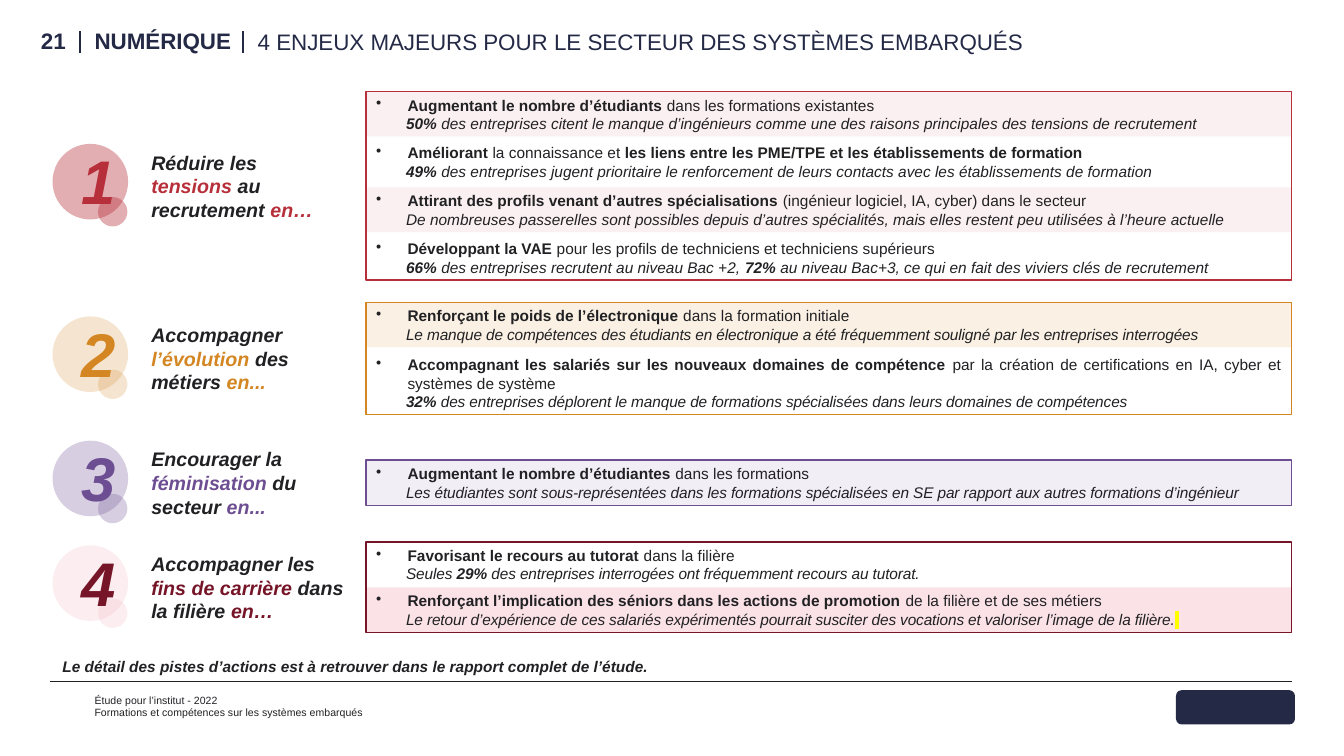
import pptx
import pptx.util
import pptx.dml.color
import pptx.enum.shapes
import pptx.enum.text
import pptx.oxml.ns
import lxml.etree
from dataclasses import dataclass

Pt = pptx.util.Pt
Shape = pptx.enum.shapes.MSO_SHAPE
Align = pptx.enum.text.PP_ALIGN
Anchor = pptx.enum.text.MSO_ANCHOR
qn = pptx.oxml.ns.qn


@dataclass(frozen=True)
class Theme:
    font: str = "Arial"
    ink: str = "212124"
    navy: str = "242946"
    red: str = "B72F3A"
    orange: str = "D38622"
    purple: str = "6D4E92"
    wine: str = "761527"
    pink: str = "F4C0CA"
    blush: str = "F4D2D5"
    pale: str = "FBF0F1"
    cream: str = "F8E7D1"
    lilac: str = "E2DAEB"
    white: str = "FFFFFF"
    marker: str = "FFFF00"
    title: float = 16
    digit: float = 44
    heading: float = 14
    body: float = 11
    footer: float = 7.5


THEME = Theme()

STAKES = [
    {"top": 65.5, "height": 134.5, "width": 140, "accent": THEME.red, "disc": (THEME.red, 39), "spacing": 0,
     "heading": [("Réduire les ", ""), ("tensions", "a"), (" au recrutement ", ""), ("en…", "a")],
     "rows": [
         (THEME.blush, 33, 32,
          [("Augmentant le nombre d’étudiants ", "b"), ("dans les formations existantes", "")],
          [("50% ", "bi"), ("des entreprises citent le manque d’ingénieurs comme une des raisons "
                            "principales des tensions de recrutement ", "i")]),
         (THEME.white, 100, 32,
          [("Améliorant", "b"), (" la connaissance et ", ""),
           ("les liens entre les PME/TPE et les établissements de formation ", "b")],
          [("49%", "bi"), (" des entreprises jugent prioritaire le renforcement de leurs contacts "
                           "avec les établissements de formation", "i")]),
         (THEME.pale, 100, 32,
          [("Attirant des profils venant d’autres spécialisations ", "b"),
           ("(ingénieur logiciel, IA, cyber) dans le secteur", "")],
          [("De nombreuses passerelles sont possibles depuis d’autres spécialités, mais elles "
            "restent peu utilisées à l’heure actuelle", "i")]),
         (THEME.white, 100, 32,
          [("Développant la VAE ", "b"), ("pour les profils de techniciens et techniciens supérieurs ", "")],
          [("66% ", "bi"), ("des entreprises recrutent au niveau Bac +2, ", "i"), ("72%", "bi"),
           (" au niveau Bac+3, ce qui en fait des viviers clés de recrutement ", "i")])]},
    {"top": 216, "height": 80, "width": 152, "accent": THEME.orange, "disc": (THEME.orange, 21), "spacing": -10,
     "heading": [("Accompagner ", ""), ("l’évolution", "a"), (" des métiers ", ""), ("en...", "a")],
     "rows": [
         (THEME.cream, 60, 32,
          [("Renforçant le poids de l’électronique ", "b"), ("dans la formation initiale", "")],
          [("Le manque de compétences des étudiants en électronique a été fréquemment souligné "
            "par les entreprises interrogées ", "i")]),
         (THEME.white, 100, 45,
          [("Accompagnant les salariés sur les nouveaux domaines de compétence ", "b"),
           ("par la création de certifications en IA, cyber et systèmes de système ", "")],
          [("32% ", "bi"), ("des entreprises déplorent le manque de formations spécialisées "
                            "dans leurs domaines de compétences ", "i")])]},
    {"top": 328.5, "height": 32.5, "width": 152, "accent": THEME.purple, "disc": (THEME.purple, 27), "spacing": -10,
     "heading": [("Encourager la ", ""), ("féminisation", "a"), (" du secteur ", ""), ("en...", "a")],
     "rows": [
         (THEME.lilac, 45, 32.5,
          [("Augmentant le nombre d’étudiantes ", "b"), ("dans les formations", "")],
          [("Les étudiantes sont sous-représentées dans les formations spécialisées en SE "
            "par rapport aux autres formations d’ingénieur", "i")])]},
    {"top": 387, "height": 65, "width": 152, "accent": THEME.wine, "disc": (THEME.pink, 27), "spacing": -10,
     "heading": [("Accompagner les ", ""), ("fins de carrière ", "a"), ("dans la filière ", ""), ("en…", "a")],
     "rows": [
         (THEME.white, 45, 32.5,
          [("Favorisant le recours au tutorat ", "b"), ("dans la filière", "")],
          [("Seules ", "i"), ("29% ", "bi"),
           ("des entreprises interrogées ont fréquemment recours au tutorat. ", "i")]),
         (THEME.pink, 45, 32.5,
          [("Renforçant l’implication des séniors dans les actions de promotion ", "b"),
           ("de la filière et de ses métiers", "")],
          [("Le retour d’expérience de ces salariés expérimentés pourrait susciter des vocations "
            "et valoriser l’image de la filière.", "i"), (" ", "ih")])]},
]


def rgb(value):
    return pptx.dml.color.RGBColor.from_string(value)


def apply(target, values):
    for name, value in values.items():
        setattr(target, name, value)


def write_spans(para, spans, size, color, accent=None, base="", spacing=0):
    for text, style in spans:
        style += base
        span = para.add_run()
        span.text = text
        apply(span.font, {"name": THEME.font, "size": Pt(size), "bold": "b" in style, "italic": "i" in style})
        span.font.color.rgb = rgb(accent if "a" in style else color)
        props = span.font._element
        if spacing:
            props.set("spc", str(spacing))
        if "h" in style:
            mark = lxml.etree.Element(qn("a:highlight"))
            lxml.etree.SubElement(mark, qn("a:srgbClr")).set("val", THEME.marker)
            props.find(qn("a:solidFill")).addnext(mark)


def add_text(page, box, lines, size, color, accent=None, base="", align=Align.LEFT, anchor=Anchor.TOP, wrap=True):
    frame = page.shapes.add_textbox(*map(Pt, box)).text_frame
    apply(frame, {"word_wrap": wrap, "vertical_anchor": anchor})
    for index, spans in enumerate(lines):
        para = frame.add_paragraph() if index else frame.paragraphs[0]
        para.alignment = align
        write_spans(para, spans, size, color, accent, base)


def add_block(page, kind, box, fill=None, alpha=100):
    block = page.shapes.add_shape(kind, *map(Pt, box))
    block.shadow.inherit = False
    block.line.fill.background()
    if fill is None:
        block.fill.background()
        return block
    block.fill.solid()
    block.fill.fore_color.rgb = rgb(fill)
    if alpha < 100:
        tint = block._element.spPr.find(qn("a:solidFill"))[0]
        lxml.etree.SubElement(tint, qn("a:alpha")).set("val", str(alpha * 1000))
    return block


def add_rule(page, start, end, color, width):
    rule = page.shapes.add_connector(pptx.enum.shapes.MSO_CONNECTOR.STRAIGHT, *map(Pt, start + end))
    apply(rule.line, {"width": Pt(width)})
    rule.line.color.rgb = rgb(color)
    lxml.etree.SubElement(rule._element.spPr, qn("a:effectLst"))


def add_header(page, left, top, width, height):
    add_text(page, (left, top, 54, height), [[("21", "b")]], THEME.title, THEME.navy, align=Align.RIGHT)
    add_text(page, (left + 60.5, top, 120, height), [[("NUMÉRIQUE", "b")]], THEME.title, THEME.navy, wrap=False)
    for offset in (57, 173.5):
        add_rule(page, (left + offset, top + 22), (left + offset, top + 6.5), THEME.navy, 1.75)
    title = [("4 ENJEUX MAJEURS POUR LE SECTEUR DES SYSTÈMES EMBARQUÉS", "")]
    add_text(page, (left + 177, top, width - 177, height), [title], THEME.title, THEME.navy, anchor=Anchor.MIDDLE)


def add_heading(page, left, middle, number, stake):
    add_text(page, (left + 63.5, middle - 22, stake["width"], 44), [stake["heading"]], THEME.heading,
             THEME.ink, stake["accent"], base="bi", anchor=Anchor.MIDDLE)
    top = middle - 30
    for x, y, size in ((32.5, 38, 21), (0, 0, 54)):
        add_block(page, Shape.OVAL, (left + x, top + y, size, size), *stake["disc"])
    add_text(page, (left + 13.5, top + 9.5, 19.5, 33), [[(str(number), "bi")]], THEME.digit,
             stake["accent"], align=Align.CENTER, anchor=Anchor.MIDDLE)


def add_row(page, box, fill, alpha, action, detail, spacing):
    row = add_block(page, Shape.RECTANGLE, box, fill, alpha)
    frame = row.text_frame
    apply(frame, {"word_wrap": True, "vertical_anchor": Anchor.MIDDLE,
                  "auto_size": pptx.enum.text.MSO_AUTO_SIZE.SHAPE_TO_FIT_TEXT})
    for para, spans, margin, indent, gap in (
            (frame.paragraphs[0], action, 22.5, -22.5, 0), (frame.add_paragraph(), detail, 21.5, 0, spacing)):
        para.alignment = Align.JUSTIFY
        props = para._p.get_or_add_pPr()
        props.set("marL", str(Pt(margin)))
        props.set("indent", str(Pt(indent)))
        if indent:
            lxml.etree.SubElement(props, qn("a:buChar")).set("char", "•")
        write_spans(para, spans, THEME.body, THEME.ink, spacing=gap)
    return row


def add_actions(page, left, top, width, height, stake):
    rows = stake["rows"]
    gap = (height - sum(row[2] for row in rows)) / max(len(rows) - 1, 1)
    y = top
    for fill, alpha, row_height, action, detail in rows:
        outline = add_row(page, (left, y, width, row_height), fill, alpha, action, detail, stake["spacing"])
        y += row_height + gap
    if len(rows) > 1:
        outline = add_block(page, Shape.RECTANGLE, (left, top, width, height))
    outline.line.color.rgb = rgb(stake["accent"])
    outline.line.width = Pt(1)


def add_footer(page, left, top, width):
    note = [("Le détail des pistes d’actions est à retrouver dans le rapport complet de l’étude.", "bi")]
    add_text(page, (left + 2, top - 21, 661, 21), [note], THEME.body, THEME.ink)
    add_rule(page, (left, top), (left + width, top), THEME.ink, 0.5)
    credits = [[("Étude pour l’institut - 2022", "")], [("Formations et compétences sur les systèmes embarqués", "")]]
    add_text(page, (left + 25, top + 5.5, 551, 29), credits, THEME.footer, THEME.ink)
    add_block(page, Shape.ROUNDED_RECTANGLE, (left + width - 83, top + 6.5, 85, 24.5), THEME.navy)


def main():
    deck = pptx.Presentation()
    apply(deck, {"slide_width": Pt(960), "slide_height": Pt(540)})
    page = deck.slides.add_slide(deck.slide_layouts[6])
    add_header(page, 0, 16, 800, 28)
    for number, stake in enumerate(STAKES, 1):
        add_heading(page, 37.5, stake["top"] + stake["height"] / 2, number, stake)
        add_actions(page, 261.5, stake["top"], 661, stake["height"], stake)
    add_footer(page, 35.5, 486.5, 887.5)
    deck.save("out.pptx")


if __name__ == "__main__":
    main()
